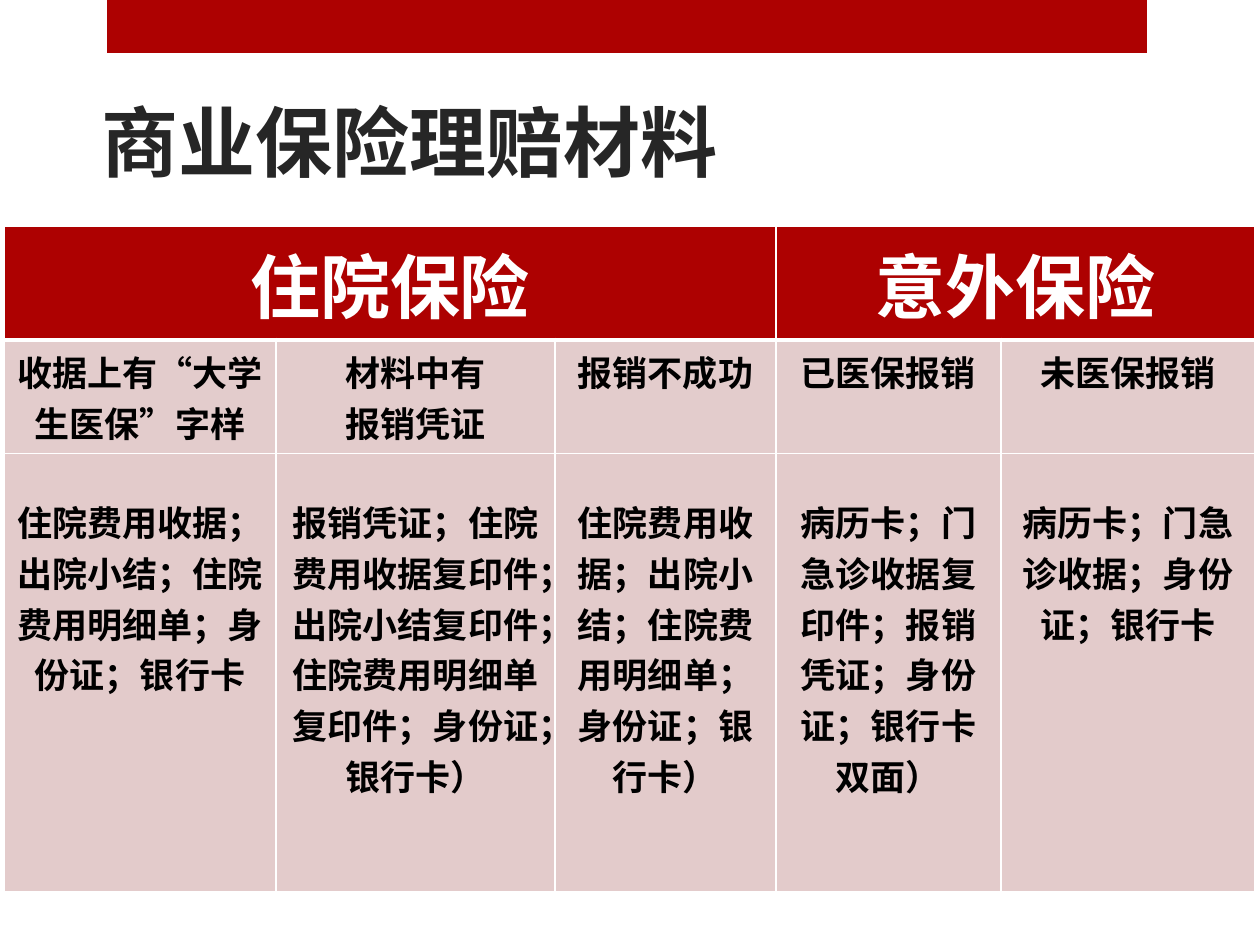
from lxml.etree import SubElement
from pptx import Presentation
from pptx.dml.color import RGBColor
from pptx.enum.lang import MSO_LANGUAGE_ID as Lang
from pptx.enum.shapes import MSO_SHAPE as Shape
from pptx.enum.text import MSO_ANCHOR as Anchor, PP_ALIGN as Align
from pptx.oxml.ns import qn
from pptx.util import Pt

EMU_PER_PX = 914400 / 126
RED = RGBColor(0xAD, 0x01, 0x01)
INK = RGBColor(0x26, 0x26, 0x26)
BLACK = RGBColor(0, 0, 0)
WHITE = RGBColor(0xFF, 0xFF, 0xFF)
PINK = RGBColor(0xE3, 0xCC, 0xCC)
ROSE = RGBColor(0xE3, 0xCB, 0xCB)

COLUMN_WIDTHS = [272, 279, 221, 225, 254]
ROW_HEIGHTS = [96, 100, 438]
# First column, last column, wording
GROUPS = [(0, 2, "住院保险"), (3, 4, "意外保险")]
CASES = ["收据上有“大学生医保”字样", "材料中有\n报销凭证", "报销不成功",
         "已医保报销", "未医保报销"]
MATERIALS = [
    "住院费用收据；出院小结；住院费用明细单；身份证；银行卡",
    "报销凭证；住院费用收据复印件；出院小结复印件；住院费用明细单复印件；身份证；\n银行卡）",
    "住院费用收据；出院小结；住院费用明细单；身份证；银行卡）",
    "病历卡；门急诊收据复印件；报销凭证；身份证；银行卡双面）",
    "病历卡；门急诊收据；身份证；银行卡",
]


def px(length):
    return round(length * EMU_PER_PX)


def write_text(frame, text, size, color, align):
    frame.text = text
    values = {"name": "Arial", "size": Pt(size), "bold": True,
              "language_id": Lang.SIMPLIFIED_CHINESE}
    for para in frame.paragraphs:
        para.alignment = align
        for span in para.runs:
            for name, value in values.items():
                setattr(span.font, name, value)
            span.font.color.rgb = color


def set_borders(cell, bottom):
    properties = cell._tc.get_or_add_tcPr()
    widths = {"a:lnL": 1, "a:lnR": 1, "a:lnT": 1, "a:lnB": bottom}
    for index, (tag, width) in enumerate(widths.items()):
        line = SubElement(properties, qn(tag), w=str(Pt(width)))
        properties.insert(index, line)
        fill = SubElement(line, qn("a:solidFill"))
        SubElement(fill, qn("a:srgbClr"), val=str(WHITE))


def paint_cell(cell, color, bottom=1):
    cell.fill.solid()
    cell.fill.fore_color.rgb = color
    set_borders(cell, bottom)


def add_band(page):
    band = page.shapes.add_shape(Shape.RECTANGLE, px(107), 0, px(1040), px(53))
    band.shadow.inherit = False
    band.fill.solid()
    band.fill.fore_color.rgb = RED
    band.line.fill.background()


def format_title(page):
    title = page.shapes.title
    place = {"left": 89, "top": 93, "width": 935, "height": 100}
    for name, value in place.items():
        setattr(title, name, px(value))
    title.text_frame.vertical_anchor = Anchor.BOTTOM
    write_text(title.text_frame, "商业保险理赔材料", 44, INK, Align.LEFT)


def add_materials_table(page):
    table = page.shapes.add_table(
        len(ROW_HEIGHTS), len(COLUMN_WIDTHS), px(4), px(226),
        px(sum(COLUMN_WIDTHS)), px(sum(ROW_HEIGHTS))).table
    for column, width in zip(table.columns, COLUMN_WIDTHS):
        column.width = px(width)
    for row, height in zip(table.rows, ROW_HEIGHTS):
        row.height = px(height)

    # Merged group headings
    for cell in table.rows[0].cells:
        paint_cell(cell, RED, bottom=3)
    for first, last, heading in GROUPS:
        cell = table.cell(0, first)
        cell.merge(table.cell(0, last))
        write_text(cell.text_frame, heading, 40, WHITE, Align.CENTER)

    # Cases, then the materials each one needs, set lower in their cells
    body = [(CASES, PINK, 6), (MATERIALS, ROSE, 42)]
    for row, (texts, color, top) in enumerate(body, start=1):
        for column, text in enumerate(texts):
            cell = table.cell(row, column)
            paint_cell(cell, color)
            cell.margin_top = px(top)
            write_text(cell.text_frame, text, 20, BLACK, Align.CENTER)


def main():
    deck = Presentation()
    deck.slide_width, deck.slide_height = px(1260), px(945)
    page = deck.slides.add_slide(deck.slide_layouts[5])
    add_band(page)
    format_title(page)
    add_materials_table(page)
    deck.save("out.pptx")


if __name__ == "__main__":
    main()
